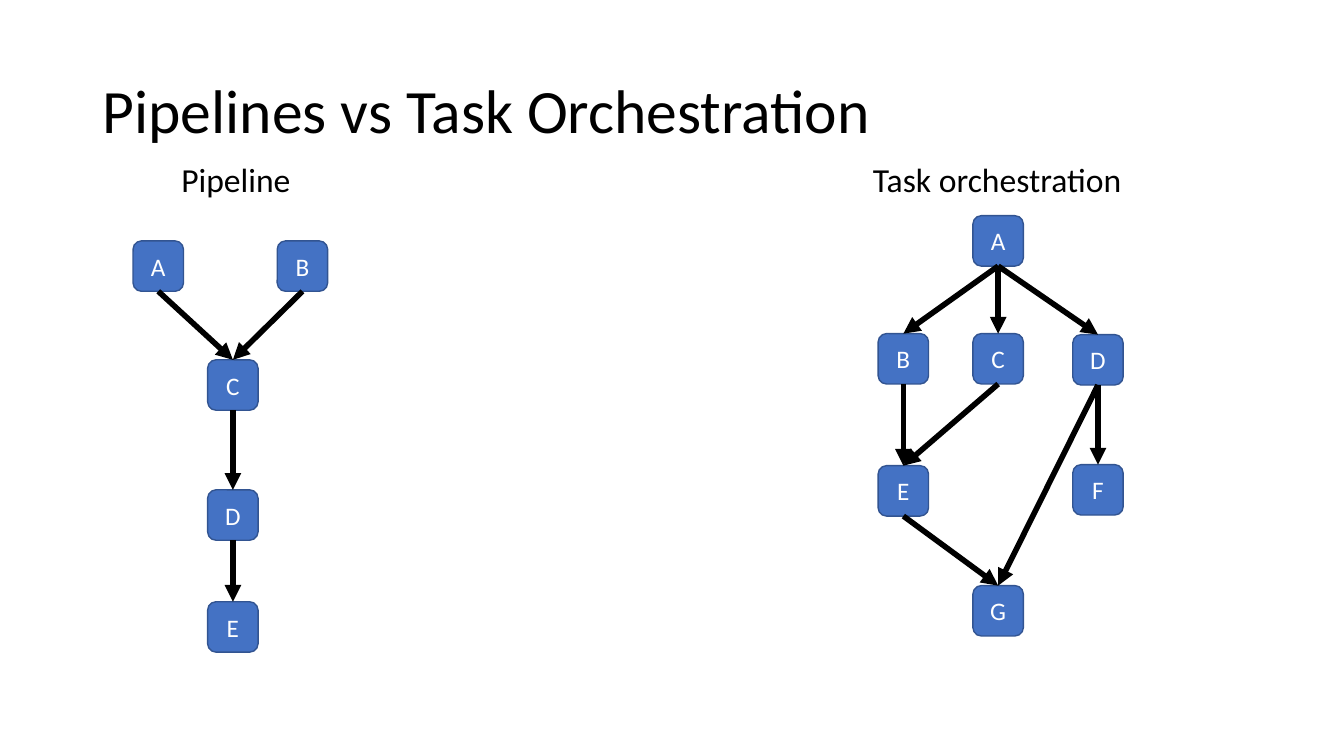
from dataclasses import dataclass

from lxml.etree import SubElement
from pptx import Presentation
from pptx.dml.color import RGBColor as Rgb
from pptx.enum.shapes import MSO_CONNECTOR as Link, MSO_SHAPE as Form
from pptx.enum.text import MSO_ANCHOR as Anchor, MSO_AUTO_SIZE as Fit, PP_ALIGN as Align
from pptx.oxml.ns import qn
from pptx.shapes.autoshape import Shape
from pptx.slide import Slide
from pptx.util import Inches, Pt

HUES = {"ink": "000000", "box": "4472C4", "edge": "325491", "light": "FFFFFF"}
SIDE = 0.5
BOTTOM, TOP = 2, 0


@dataclass(frozen=True)
class Label:
    text: str
    left: float
    top: float
    width: float
    height: float
    size: int
    frame: dict
    lines: dict


@dataclass(frozen=True)
class Node:
    name: str
    left: float
    top: float


@dataclass(frozen=True)
class Graph:
    nodes: tuple[Node, ...]
    links: tuple[str, ...]


HEAD = {"word_wrap": False, "auto_size": Fit.SHAPE_TO_FIT_TEXT}
LABELS = (
    Label("Pipelines vs Task Orchestration", 0.92, 0.4, 11.5, 1.45, 44,
          {"word_wrap": True, "vertical_anchor": Anchor.MIDDLE}, {"line_spacing": 0.9}),
    Label("Pipeline", 1.7, 1.53, 1.3, 0.5, 24, HEAD, {}),
    Label("Task orchestration", 8.56, 1.53, 2.69, 0.5, 24, HEAD, {}),
)

STEM = 2.06
WEST, MID, EAST = 8.71, 9.65, 10.64
GRAPHS = (
    Graph(
        (Node("A", 1.32, 2.39), Node("B", 2.75, 2.39), Node("C", STEM, 3.57),
         Node("D", STEM, 4.86), Node("E", STEM, 5.97)),
        ("AC", "BC", "CD", "DE"),
    ),
    Graph(
        (Node("A", MID, 2.14), Node("B", WEST, 3.31), Node("C", MID, 3.31),
         Node("D", EAST, 3.32), Node("E", WEST, 4.62), Node("F", EAST, 4.61),
         Node("G", MID, 5.81)),
        ("AB", "AC", "AD", "BE", "CE", "DF", "DG", "EG"),
    ),
)


def apply(target: object, values: dict) -> None:
    for key, value in values.items():
        setattr(target, key, value)


def tint(hue: str) -> Rgb:
    return Rgb.from_string(HUES[hue])


def write(shape: Shape, text: str, size: int, hue: str, frame: dict, lines: dict) -> None:
    body = shape.text_frame
    apply(body, frame)
    para = body.paragraphs[0]
    apply(para, lines)
    run = para.add_run()
    run.text = text
    apply(run.font, {"name": "Calibri", "size": Pt(size)})
    run.font.color.rgb = tint(hue)


def draw_label(slide: Slide, label: Label) -> None:
    spot = map(Inches, (label.left, label.top, label.width, label.height))
    box = slide.shapes.add_textbox(*spot)
    write(box, label.text, label.size, "ink", label.frame, label.lines)


def draw_node(slide: Slide, node: Node) -> Shape:
    spot = map(Inches, (node.left, node.top, SIDE, SIDE))
    box = slide.shapes.add_shape(Form.ROUNDED_RECTANGLE, *spot)
    box.shadow.inherit = False
    box.fill.solid()
    box.fill.fore_color.rgb = tint("box")
    box.line.color.rgb = tint("edge")
    box.line.width = Pt(1)
    write(box, node.name, 18, "light",
          {"word_wrap": True, "vertical_anchor": Anchor.MIDDLE}, {"alignment": Align.CENTER})
    return box


def draw_link(slide: Slide, start: Shape, end: Shape) -> None:
    arrow = slide.shapes.add_connector(Link.STRAIGHT, 0, 0, 0, 0)
    arrow.begin_connect(start, BOTTOM)
    arrow.end_connect(end, TOP)
    arrow.line.color.rgb = tint("ink")
    arrow.line.width = Pt(4)
    SubElement(arrow.line._get_or_add_ln(), qn("a:tailEnd"), type="triangle")
    SubElement(arrow._element.spPr, qn("a:effectLst"))


def draw_graph(slide: Slide, graph: Graph) -> None:
    boxes = {node.name: draw_node(slide, node) for node in graph.nodes}
    for start, end in graph.links:
        draw_link(slide, boxes[start], boxes[end])


def main() -> None:
    deck = Presentation()
    apply(deck, {"slide_width": Inches(13.33), "slide_height": Inches(7.5)})
    slide = deck.slides.add_slide(deck.slide_layouts[6])
    for label in LABELS:
        draw_label(slide, label)
    for graph in GRAPHS:
        draw_graph(slide, graph)
    deck.save("out.pptx")


if __name__ == "__main__":
    main()
